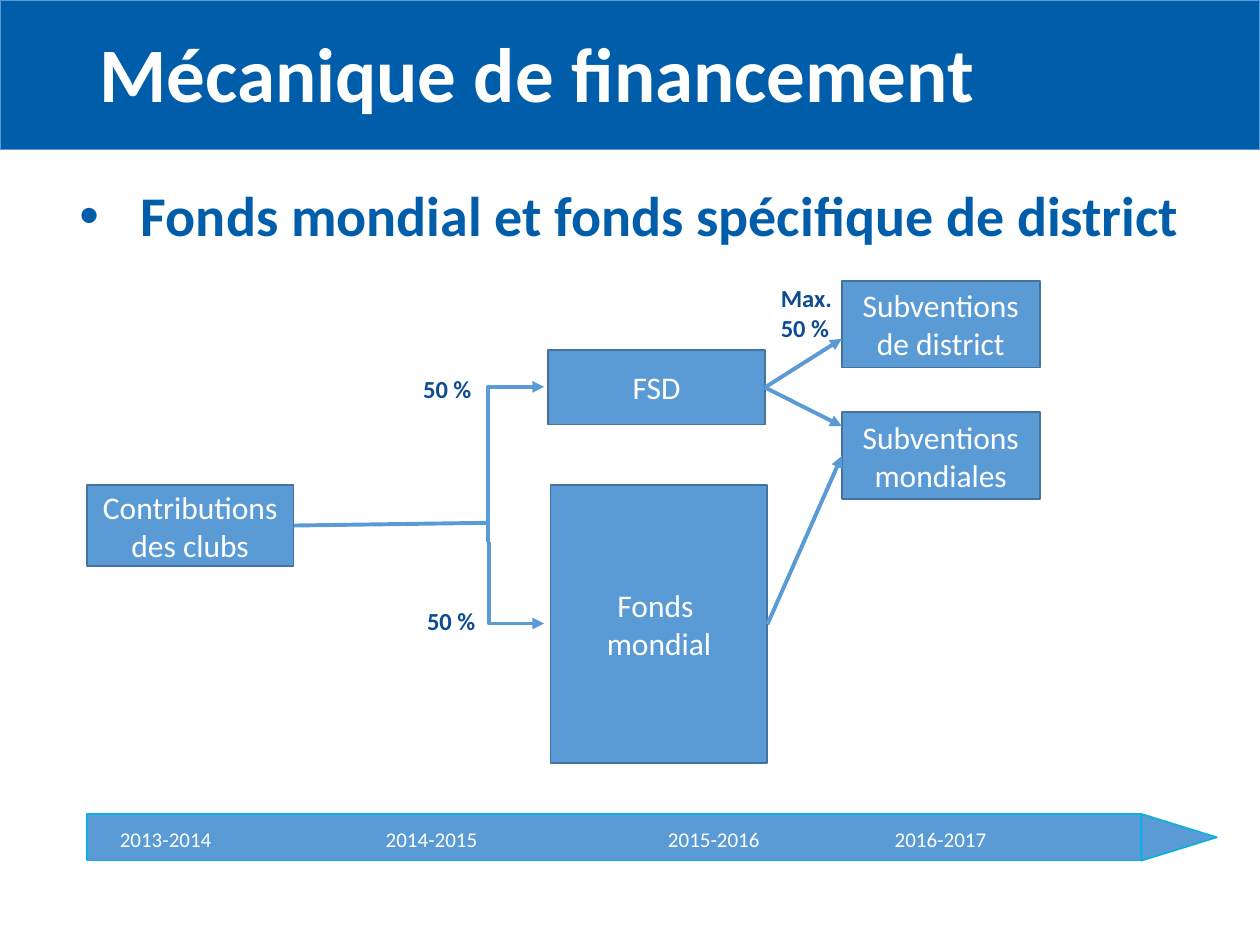
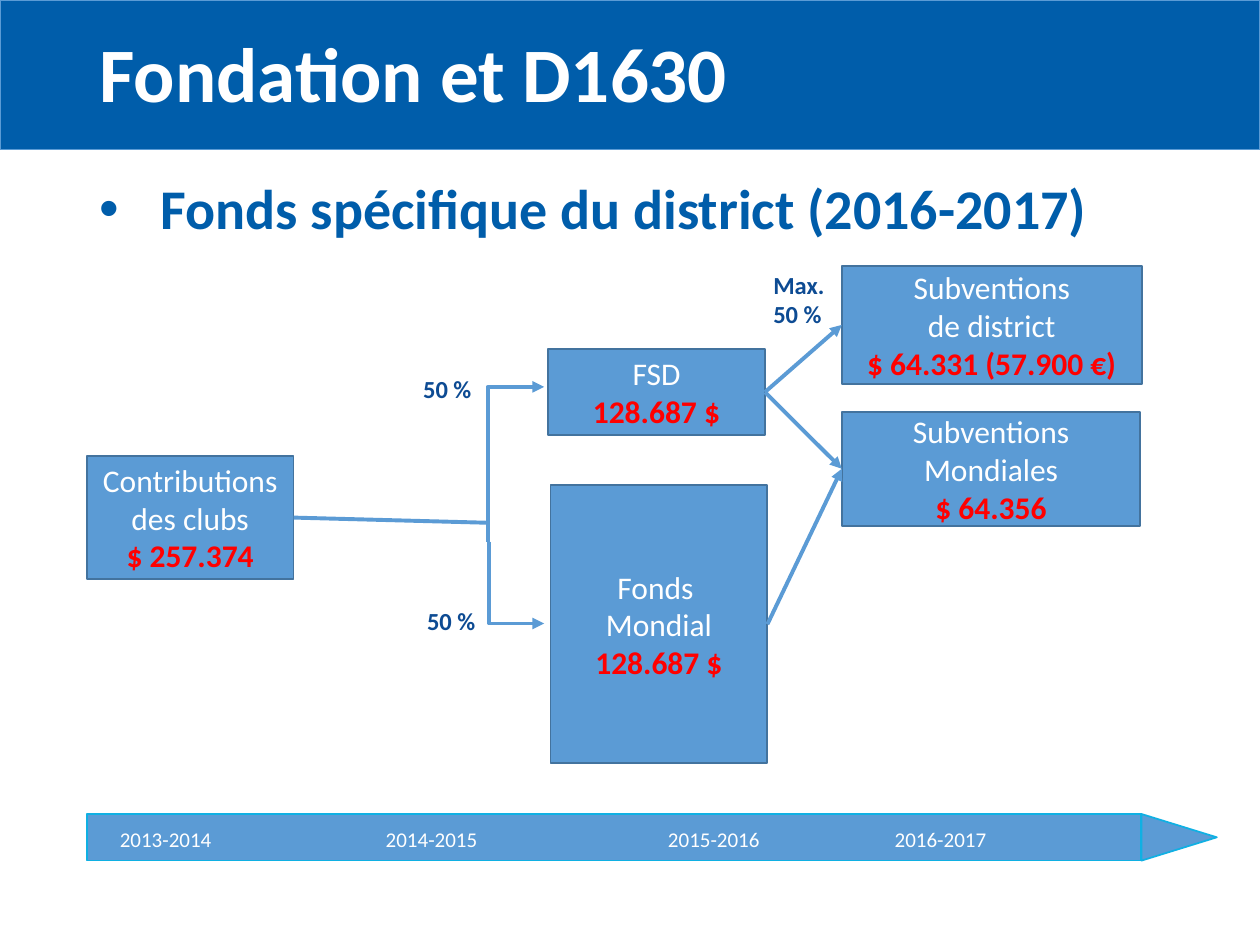
from pptx import Presentation, util as u
from pptx.dml.color import RGBColor
from pptx.enum import shapes, text
from pptx.oxml import parse_xml
from pptx.oxml.ns import nsdecls, qn

COLORS = {"band": "005DAA", "box": "5B9BD5", "edge": "43739E", "time": "10B0E3",
          "label": "0D4B93", "white": "FFFFFF", "amount": "FF0000"}
FONTS = {
    "title": {"size": u.Pt(44), "bold": True, "color": "white"},
    "heading": {"size": u.Pt(32), "bold": True, "color": "band"},
    "box": {"size": u.Pt(18), "color": "white"},
    "amount": {"size": u.Pt(18), "bold": True, "color": "amount"},
    "year": {"size": u.Pt(12), "color": "white"},
    "label": {"size": u.Pt(14), "bold": True, "color": "label"},
}
RECT = shapes.MSO_SHAPE.RECTANGLE
CENTER = text.PP_ALIGN.CENTER
YEARS = {"2013-2014": 0, "2014-2015": 5.36, "2015-2016": 11.05, "2016-2017": 15.62}

SLIDES = [
    {
        "title": "Mécanique de financement",
        "heading": "Fonds mondial et fonds spécifique de district",
        "heading_box": (1.35, 3.66, 23.19, 13.64),
        "boxes": {
            "clubs": ((0, 4.48, 4.17, 1.63), ["Contributions", "des clubs"], None),
            "fsd": ((9.3, 1.76, 4.37, 1.5), ["FSD"], None),
            "fund": ((9.35, 4.48, 4.37, 5.61), ["Fonds ", "mondial"], None),
            "district": ((15.22, 0.36, 3.99, 1.75), ["Subventions", "de district"], None),
            "world": ((15.22, 3.01, 3.99, 1.75), ["Subventions", "mondiales"], None),
        },
        "arrow_ends": (1.53, 3.29, 3.89),
        "max_at": (13.74, 0.29),
    },
    {
        "title": "Fondation et D1630",
        "heading": "Fonds spécifique du district (2016-2017)",
        "heading_box": (1.75, 3.53, 21.9, 13.64),
        "boxes": {
            "clubs": ((0, 3.89, 4.17, 2.49), ["Contributions", "des clubs"], "$ 257.374"),
            "fsd": ((9.3, 1.74, 4.37, 1.73), ["FSD"], "128.687 $"),
            "fund": ((9.35, 4.48, 4.37, 5.61), ["Fonds ", "Mondial"], "128.687 $"),
            "district": ((15.22, 0.06, 6.05, 2.39), ["Subventions", "de district"],
                         "$ 64.331 (57.900 €)"),
            "world": ((15.22, 3.01, 6.02, 2.29), ["Subventions", "Mondiales"], "$ 64.356"),
        },
        "arrow_ends": (1.25, 4.15, 4.15),
        "max_at": (13.59, 0.01),
    },
]


def cm(values):
    return [u.Cm(v) for v in values]


def rgb(name):
    return RGBColor.from_string(COLORS[name])


def set_attrs(target, **values):
    for name, value in values.items():
        setattr(target, name, value)


def write(p, content, style, **para):
    set_attrs(p, **para)
    r = p.add_run()
    r.text = content
    values = dict(FONTS[style], name="Calibri")
    r.font.color.rgb = rgb(values.pop("color"))
    set_attrs(r.font, **values)


def add_panel(s, box, edge, kind=RECT, fill="box", width=1):
    sp = s.shapes.add_shape(kind, *cm(box))
    sp.shadow.inherit = False
    sp.fill.solid()
    sp.fill.fore_color.rgb = rgb(fill)
    sp.line.color.rgb = rgb(edge)
    sp.line.width = u.Pt(width)
    return sp


def add_text(s, box, content, style, **para):
    tf = s.shapes.add_textbox(*cm(box)).text_frame
    tf.word_wrap = True
    p = tf.paragraphs[0]
    write(p, content, style, **para)
    return p


def add_line(s, start, end, arrow=True, kind=shapes.MSO_CONNECTOR.STRAIGHT):
    cxn = s.shapes.add_connector(kind, *cm(start + end))
    cxn.line.color.rgb = rgb("box")
    cxn.line.width = u.Pt(2.25)
    if arrow:
        cxn.line._get_or_add_ln().append(
            parse_xml(f'<a:tailEnd {nsdecls("a")} type="triangle"/>'))
    cxn._element.spPr.append(parse_xml(f'<a:effectLst {nsdecls("a")}/>'))
    return cxn


def add_bend(s, start, end):
    (x1, y1), (x2, y2) = start, end
    mid_x, mid_y = (x1 + x2) / 2, (y1 + y2) / 2
    half_w, half_h = abs(y2 - y1) / 2, (x2 - x1) / 2
    rise = half_h if y2 < y1 else -half_h
    cxn = add_line(s, (mid_x + half_w, mid_y + rise), (mid_x - half_w, mid_y - rise),
                   kind=shapes.MSO_CONNECTOR.ELBOW)
    spPr = cxn._element.spPr
    spPr.find(qn("a:prstGeom")).set("prst", "bentConnector2")
    spPr.find(qn("a:xfrm")).set("rot", str((90 if y2 < y1 else 270) * 60000))


def add_band(s, layout, box):
    band = add_panel(s, box, "box", fill="band", width=0.5)
    layout.shapes._spTree.insert(2, band._element)


def add_title(s, content, box):
    sp = s.shapes.title
    set_attrs(sp, **dict(zip(("left", "top", "width", "height"), cm(box))))
    sp.text_frame.vertical_anchor = text.MSO_ANCHOR.MIDDLE
    write(sp.text_frame.paragraphs[0], content, "title",
          alignment=text.PP_ALIGN.LEFT, line_spacing=0.9)


def add_heading(s, content, box):
    p = add_text(s, box, content, "heading", line_spacing=0.9, space_before=u.Pt(10))
    pPr = p._p.get_or_add_pPr()
    pPr.set("marL", str(u.Cm(1.24)))
    pPr.set("indent", str(-u.Cm(1.24)))
    pPr.append(parse_xml(f'<a:buFont {nsdecls("a")} typeface="Arial"/>'))
    pPr.append(parse_xml(f'<a:buChar {nsdecls("a")} char="•"/>'))


def add_box(s, box, lines, amount):
    tf = add_panel(s, box, "edge").text_frame
    tf.word_wrap = True
    tf.vertical_anchor = text.MSO_ANCHOR.MIDDLE
    rows = [(line, "box") for line in lines]
    if amount:
        rows.append((amount, "amount"))
    for i, (line, style) in enumerate(rows):
        p = tf.add_paragraph() if i else tf.paragraphs[0]
        write(p, line, style, alignment=CENTER)


def add_flow(s, data, origin):
    left, top = origin

    def at(x, y):
        return left + x, top + y

    def right_of(name):
        x, y, w, h = data["boxes"][name][0]
        return at(x + w, y + h / 2)

    for (x, y, w, h), lines, amount in data["boxes"].values():
        add_box(s, (*at(x, y), w, h), lines, amount)

    add_bend(s, at(8.08, 5.62), at(9.22, 2.5))
    add_bend(s, at(8.11, 5.62), at(9.22, 7.27))
    add_line(s, right_of("clubs"), at(8.11, 5.24), arrow=False)
    for source, end_y in zip(("fsd", "fsd", "fund"), data["arrow_ends"]):
        add_line(s, right_of(source), at(15.22, end_y))

    for x, y in ((6.53, 2.12), (6.61, 6.79)):
        add_text(s, (*at(x, y), 2.16, 0.86), "50 %", "label")
    add_text(s, (*at(*data["max_at"]), 1.7, 1.45), "Max. 50 %", "label")


def add_timeline(s, box):
    x, y, w, h = box
    tip = 1.52
    shift = (tip - h) / 2
    head = add_panel(s, (x + w + shift, y - shift, h, tip), "time",
                     kind=shapes.MSO_SHAPE.ISOSCELES_TRIANGLE)
    head.rotation = 90
    add_panel(s, box, "time")
    for year, offset in YEARS.items():
        add_text(s, (x + offset, y + 0.13, 3.18, 0.76), year, "year", alignment=CENTER)


def add_funding_slide(prs, layout, data):
    s = prs.slides.add_slide(layout)
    add_title(s, data["title"], (1.75, 0.48, 21.9, 2.18))
    add_heading(s, data["heading"], data["heading_box"])
    add_flow(s, data, (1.75, 5.3))
    add_timeline(s, (1.75, 16.41, 21.26, 0.94))
    return s


def main():
    prs = Presentation()
    set_attrs(prs, slide_width=u.Cm(25.4), slide_height=u.Cm(19.05))
    layout = prs.slide_layouts.get_by_name("Title Only")
    for data in SLIDES:
        s = add_funding_slide(prs, layout, data)
    add_band(s, layout, (0, 0, 25.4, 3.02))
    prs.save("out.pptx")


if __name__ == "__main__":
    main()
